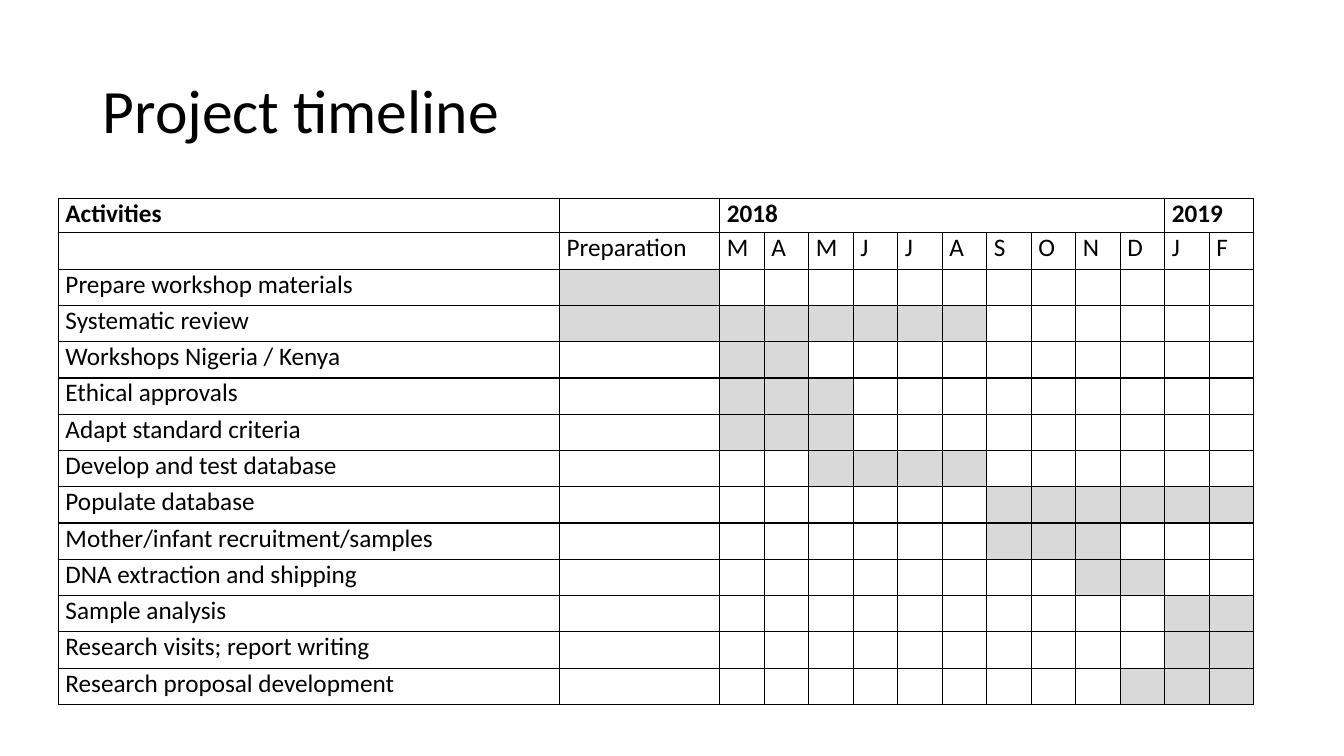
from dataclasses import dataclass

from lxml import etree
from pptx import Presentation
from pptx.dml.color import RGBColor
from pptx.enum.text import MSO_ANCHOR, PP_ALIGN
from pptx.oxml.ns import qn
from pptx.slide import Slide
from pptx.table import Table, _Cell
from pptx.text.text import _Paragraph
from pptx.util import Inches, Pt

BLACK = RGBColor(0x00, 0x00, 0x00)
BUSY_GREY = RGBColor(0xD9, 0xD9, 0xD9)
LEFT = PP_ALIGN.LEFT
TOP = MSO_ANCHOR.TOP
MIDDLE = MSO_ANCHOR.MIDDLE
FONT = "Calibri"

SLIDE_WIDTH, SLIDE_HEIGHT = 13.33, 7.5
TABLE_LEFT, TABLE_TOP, TABLE_WIDTH = 0.58, 1.97, 11.86
ACTIVITY_WIDTH, PREPARATION_WIDTH = 4.97, 1.59
YEAR_ROW_HEIGHT, ROW_HEIGHT = 0.34, 0.36
CELL_PADDING = 0.07
BORDER_WIDTH = 1

MONTHS = "MAMJJASONDJF"
MONTHS_IN_2018 = 10
PREPARATION_COLUMN = 1
FIRST_MONTH_COLUMN = 2
HEADER_ROWS = 2


@dataclass(frozen=True)
class Activity:
    name: str
    first_column: int
    last_column: int


ACTIVITIES = [
    Activity("Prepare workshop materials", 1, 1),
    Activity("Systematic review", 1, 7),
    Activity("Workshops Nigeria / Kenya", 2, 3),
    Activity("Ethical approvals", 2, 4),
    Activity("Adapt standard criteria", 2, 4),
    Activity("Develop and test database", 4, 7),
    Activity("Populate database", 8, 13),
    Activity("Mother/infant recruitment/samples", 8, 10),
    Activity("DNA extraction and shipping", 10, 11),
    Activity("Sample analysis", 12, 13),
    Activity("Research visits; report writing", 12, 13),
    Activity("Research proposal development", 11, 13),
]


def format_runs(paragraph: _Paragraph, size: int, bold: bool = False) -> None:
    for run in paragraph.runs:
        run.font.name = FONT
        run.font.size = Pt(size)
        run.font.bold = bold
        run.font.color.rgb = BLACK


def write_cell(cell: _Cell, text: str, bold: bool = False) -> None:
    cell.text_frame.text = text
    format_runs(cell.text_frame.paragraphs[0], 18, bold)


def add_borders(cell: _Cell) -> None:
    properties = cell._tc.get_or_add_tcPr()
    for position, side in enumerate(("a:lnL", "a:lnR", "a:lnT", "a:lnB")):
        border = etree.Element(qn(side), w=str(Pt(BORDER_WIDTH)))
        fill = etree.SubElement(border, qn("a:solidFill"))
        etree.SubElement(fill, qn("a:srgbClr"), val=str(BLACK))
        properties.insert(position, border)


def prepare_cell(cell: _Cell) -> None:
    cell.margin_left = cell.margin_right = Inches(CELL_PADDING)
    cell.margin_top = cell.margin_bottom = 0
    cell.vertical_anchor = TOP
    cell.fill.background()
    add_borders(cell)


def add_title(slide: Slide) -> None:
    title = slide.shapes.title
    title.left, title.top = Inches(0.92), Inches(0.4)
    title.width, title.height = Inches(11.5), Inches(1.45)
    title.text_frame.text = "Project timeline"
    title.text_frame.vertical_anchor = MIDDLE
    heading = title.text_frame.paragraphs[0]
    heading.alignment = LEFT
    heading.line_spacing = 0.9
    format_runs(heading, 44)


def add_grid(slide: Slide) -> Table:
    row_count = HEADER_ROWS + len(ACTIVITIES)
    column_count = FIRST_MONTH_COLUMN + len(MONTHS)
    table_height = YEAR_ROW_HEIGHT + ROW_HEIGHT * (row_count - 1)
    timeline = slide.shapes.add_table(
        row_count, column_count, Inches(TABLE_LEFT), Inches(TABLE_TOP),
        Inches(TABLE_WIDTH), Inches(table_height),
    ).table
    timeline.first_row = False
    timeline.horz_banding = False

    month_width = (TABLE_WIDTH - ACTIVITY_WIDTH - PREPARATION_WIDTH) / len(MONTHS)
    widths = [ACTIVITY_WIDTH, PREPARATION_WIDTH] + [month_width] * len(MONTHS)
    for column, width in zip(timeline.columns, widths):
        column.width = Inches(width)
    for row in timeline.rows:
        row.height = Inches(ROW_HEIGHT)
    timeline.rows[0].height = Inches(YEAR_ROW_HEIGHT)
    for cell in timeline.iter_cells():
        prepare_cell(cell)
    return timeline


def fill_headers(timeline: Table) -> None:
    first_2019_column = FIRST_MONTH_COLUMN + MONTHS_IN_2018
    last_column = len(timeline.columns) - 1
    write_cell(timeline.cell(0, 0), "Activities", bold=True)
    for year, first, last in (
        ("2018", FIRST_MONTH_COLUMN, first_2019_column - 1),
        ("2019", first_2019_column, last_column),
    ):
        timeline.cell(0, first).merge(timeline.cell(0, last))
        write_cell(timeline.cell(0, first), year, bold=True)
    write_cell(timeline.cell(1, PREPARATION_COLUMN), "Preparation")
    for column, month in enumerate(MONTHS, FIRST_MONTH_COLUMN):
        write_cell(timeline.cell(1, column), month)


def fill_activities(timeline: Table) -> None:
    for row, activity in enumerate(ACTIVITIES, HEADER_ROWS):
        write_cell(timeline.cell(row, 0), activity.name)
        for column in range(activity.first_column, activity.last_column + 1):
            busy = timeline.cell(row, column).fill
            busy.solid()
            busy.fore_color.rgb = BUSY_GREY


def main() -> None:
    presentation = Presentation()
    presentation.slide_width = Inches(SLIDE_WIDTH)
    presentation.slide_height = Inches(SLIDE_HEIGHT)
    slide = presentation.slides.add_slide(presentation.slide_layouts[5])
    add_title(slide)
    timeline = add_grid(slide)
    fill_headers(timeline)
    fill_activities(timeline)
    presentation.save("out.pptx")


if __name__ == "__main__":
    main()
